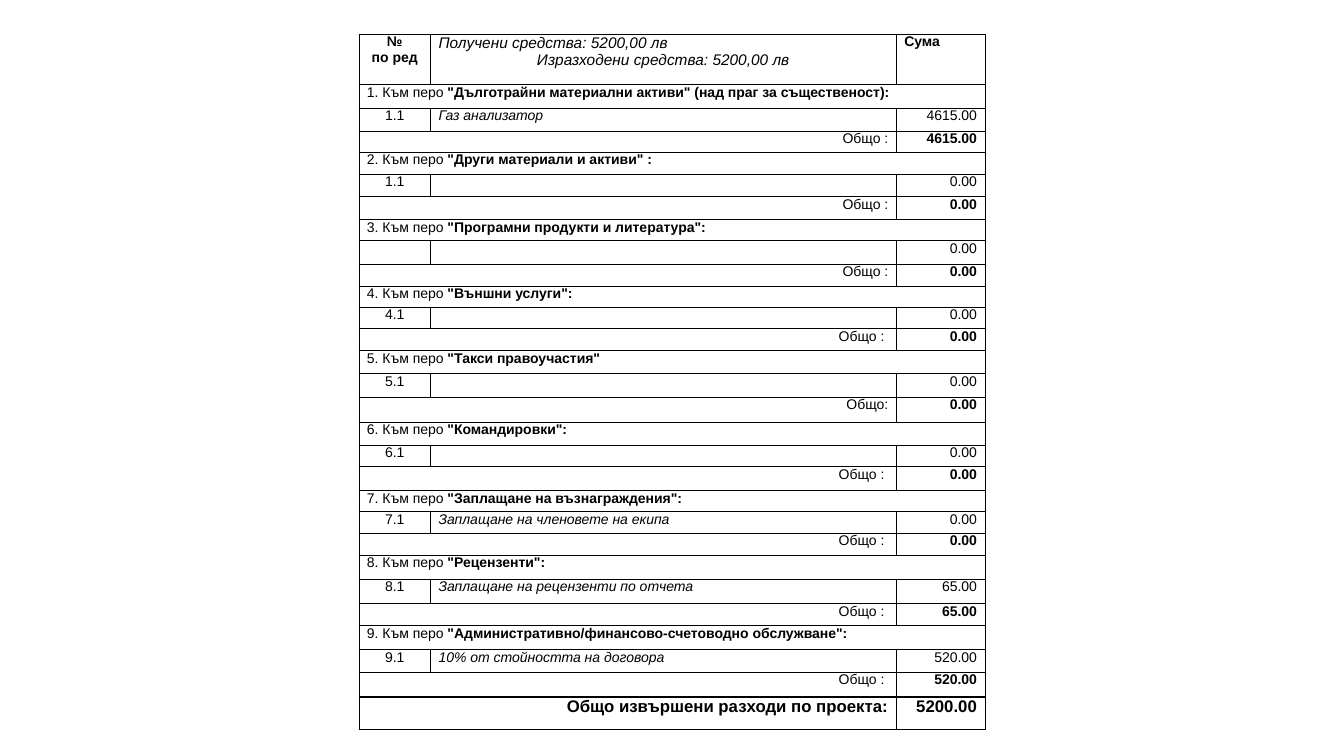
from lxml import etree
from pptx import Presentation
from pptx.dml.color import RGBColor
from pptx.enum.text import PP_ALIGN
from pptx.oxml.ns import qn
from pptx.util import Inches, Pt

LEFT, CENTER, RIGHT = PP_ALIGN.LEFT, PP_ALIGN.CENTER, PP_ALIGN.RIGHT
BLACK = RGBColor(0, 0, 0)
FONT = "Arial"
THIN, THICK = 0.5, 1

COLUMN_WIDTHS = [0.71, 4.62, 0.88]
HEADER_HEIGHT, GRAND_TOTAL_HEIGHT = 0.5, 0.32
SECTIONS = [
    ('"Дълготрайни материални активи" (над праг за същественост):', "1.1",
     "Газ анализатор", "4615.00", "Общо :", (0.23, 0.23, 0.21)),
    ('"Други материали и активи" :', "1.1", "", "0.00", "Общо :", (0.22, 0.22, 0.23)),
    ('"Програмни продукти и литература":', "", "", "0.00", "Общо :", (0.21, 0.23, 0.22)),
    ('"Външни услуги":', "4.1", "", "0.00", "Общо : ", (0.21, 0.21, 0.22)),
    ('"Такси правоучастия"', "5.1", "", "0.00", "Общо:", (0.23, 0.23, 0.25)),
    ('"Командировки":', "6.1", "", "0.00", "Общо : ", (0.23, 0.21, 0.24)),
    ('"Заплащане на възнаграждения":', "7.1", "Заплащане на членовете на екипа",
     "0.00", "Общо : ", (0.21, 0.21, 0.22)),
    ('"Рецензенти":', "8.1", "Заплащане на рецензенти по отчета",
     "65.00", "Общо : ", (0.24, 0.24, 0.22)),
    ('"Административно/финансово-счетоводно обслужване":', "9.1",
     "10% от стойността на договора", "520.00", "Общо : ", (0.24, 0.22, 0.25)),
]


def write(p, text, size=10, bold=False, italic=False, align=LEFT):
    p.alignment = align
    if not text:
        etree.SubElement(p._p, qn("a:endParaRPr"), sz=str(size * 100))
        return
    r = p.add_run()
    r.text = text
    r.font.name = FONT
    r.font.size = Pt(size)
    r.font.bold = bold
    r.font.italic = italic
    r.font.color.rgb = BLACK


def write_cell(cell, text, **fmt):
    write(cell.text_frame.paragraphs[0], text, **fmt)


def set_borders(cell, **widths):
    tc_pr = cell._tc.get_or_add_tcPr()
    for side in "LRTB":
        ln = etree.SubElement(tc_pr, qn(f"a:ln{side}"), w=str(Pt(widths.get(side, THIN))))
        fill = etree.SubElement(ln, qn("a:solidFill"))
        etree.SubElement(fill, qn("a:srgbClr"), val=str(BLACK))


def format_grid(table):
    last = len(table.rows) - 1
    for i, row in enumerate(table.rows):
        for j, cell in enumerate(row.cells):
            cell.margin_left = cell.margin_right = Inches(0.08)
            cell.margin_top = cell.margin_bottom = 0
            widths = {}
            if i in (0, 1, last):
                widths["T"] = THICK
            if i in (0, last - 1):
                widths["B"] = THICK
            if i == 0 and j > 0 or i == last and j == 2:
                widths["L"] = THICK
            if i == 0 and j < 2 or i == last and j < 2:
                widths["R"] = THICK
            set_borders(cell, **widths)
            cell.fill.background()


def fill_header(table):
    number, funds, amount = table.rows[0].cells
    write_cell(number, "№", bold=True, align=CENTER)
    write(number.text_frame.add_paragraph(), "по ред", bold=True, align=CENTER)
    write_cell(funds, "Получени средства: 5200,00 лв", size=11, italic=True)
    write(funds.text_frame.add_paragraph(), "Изразходени средства: 5200,00 лв",
          size=11, italic=True, align=CENTER)
    write_cell(amount, "Сума", bold=True)


def fill_total(table, row, label, amount, size=10, bold=False):
    table.cell(row, 0).merge(table.cell(row, 1))
    write_cell(table.cell(row, 0), label, size=size, bold=bold, align=RIGHT)
    write_cell(table.cell(row, 2), amount, size=size, bold=True, align=RIGHT)


def fill_section(table, index, section):
    title, number, item, amount, label, _ = section
    top = 1 + 3 * index
    heading = table.cell(top, 0)
    heading.merge(table.cell(top, 2))
    write_cell(heading, f"{index + 1}. Към перо ")
    write_cell(heading, title, bold=True)
    write_cell(table.cell(top + 1, 0), number, align=CENTER)
    write_cell(table.cell(top + 1, 1), item, italic=True)
    write_cell(table.cell(top + 1, 2), amount, align=RIGHT)
    fill_total(table, top + 2, label, amount)


def add_expense_table(s, left, top):
    heights = [HEADER_HEIGHT, *(h for section in SECTIONS for h in section[-1]),
               GRAND_TOTAL_HEIGHT]
    table = s.shapes.add_table(
        len(heights), len(COLUMN_WIDTHS), Inches(left), Inches(top),
        Inches(sum(COLUMN_WIDTHS)), Inches(sum(heights))).table
    table.first_row = table.horz_banding = False
    for column, width in zip(table.columns, COLUMN_WIDTHS):
        column.width = Inches(width)
    for row, height in zip(table.rows, heights):
        row.height = Inches(height)
    format_grid(table)
    fill_header(table)
    for index, section in enumerate(SECTIONS):
        fill_section(table, index, section)
    fill_total(table, len(heights) - 1, "Общо извършени разходи по проекта:",
               "5200.00", size=12, bold=True)


def main():
    prs = Presentation()
    prs.slide_width, prs.slide_height = Inches(13.33), Inches(7.5)
    s = prs.slides.add_slide(prs.slide_layouts[6])
    add_expense_table(s, 3.56, 0.34)
    prs.save("out.pptx")


if __name__ == "__main__":
    main()
